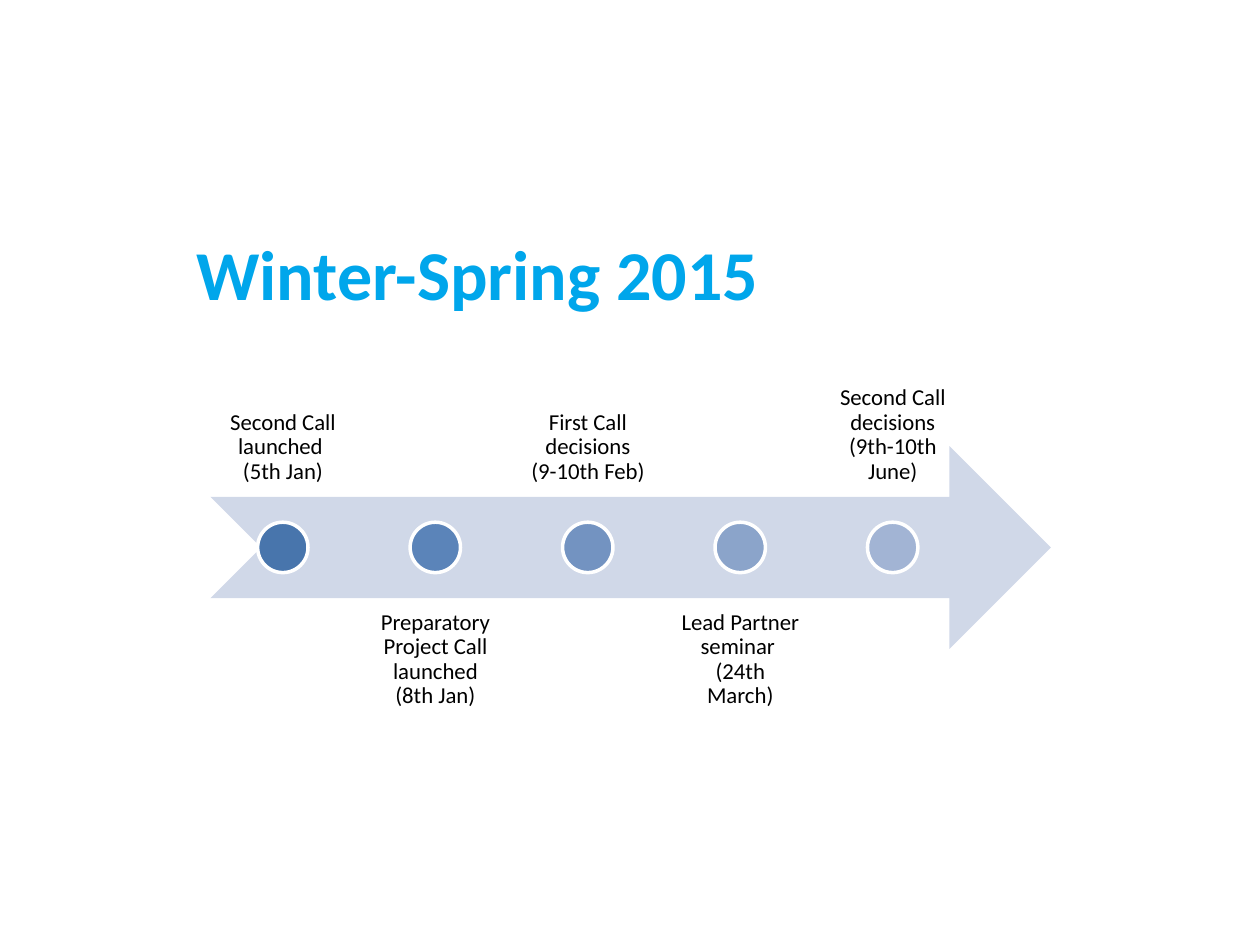
"""Build a timeline slide of the calls planned for winter and spring 2015."""
from pptx import Presentation
from pptx import util as u
from pptx.dml.color import RGBColor
from pptx.enum import shapes, text

MILESTONES = [
    (["Second Call launched ", "(5th Jan)"], "4875AC"),
    (["Preparatory Project Call launched", "(8th Jan)"], "5B84B9"),
    (["First Call decisions", "(9-10th Feb)"], "7393C1"),
    (["Lead Partner seminar ", "(24th March)"], "8BA4CA"),
    (["Second Call decisions", "(9th-10th June)"], "A2B4D4"),
]
ARROW_LEFT, ARROW_TOP, ARROW_WIDTH, ARROW_HEIGHT = 1.67, 3.54, 6.67, 1.61
LABEL_WIDTH, COLUMN_STEP, DOT_SIZE = 1.15, 1.21, 0.4
AXIS = ARROW_TOP + ARROW_HEIGHT / 2
LABEL_OFFSET = 0.4


def add_filled(kind, left, top, width, height, color):
    shape = slide.shapes.add_shape(kind, *map(u.Inches, (left, top, width, height)))
    shape.shadow.inherit = False
    shape.fill.solid()
    shape.fill.fore_color.rgb = RGBColor.from_string(color)
    shape.line.fill.background()
    return shape


def add_label(left, top, width, height, lines, size, color, anchor, bold=False):
    box = slide.shapes.add_textbox(*map(u.Inches, (left, top, width, height)))
    frame = box.text_frame
    frame.word_wrap = True
    frame.vertical_anchor = anchor
    frame.margin_top = frame.margin_bottom = u.Inches(0.1)
    paragraph = frame.paragraphs[0]
    for index, line in enumerate(lines):
        if index:
            paragraph.add_line_break()
        run = paragraph.add_run()
        run.text = line
        run.font.name = "Calibri"
        run.font.size = u.Pt(size)
        run.font.bold = bold
        run.font.color.rgb = RGBColor.from_string(color)
    return paragraph


presentation = Presentation()
presentation.slide_width, presentation.slide_height = u.Inches(10), u.Inches(7.5)
slide = presentation.slides.add_slide(presentation.slide_layouts[6])

add_label(1.46, 1.75, 7.09, 0.82, ["Winter-Spring 2015"], 40, "00A6EB",
          text.MSO_ANCHOR.MIDDLE, bold=True)
add_filled(shapes.MSO_SHAPE.NOTCHED_RIGHT_ARROW,
           ARROW_LEFT, ARROW_TOP, ARROW_WIDTH, ARROW_HEIGHT, "D0D8E8")

for column, (lines, color) in enumerate(MILESTONES):
    left = ARROW_LEFT + column * COLUMN_STEP
    if column % 2:
        top, anchor = AXIS + LABEL_OFFSET, text.MSO_ANCHOR.TOP
    else:
        top, anchor = AXIS - LABEL_OFFSET - ARROW_HEIGHT, text.MSO_ANCHOR.BOTTOM
    paragraph = add_label(left, top, LABEL_WIDTH, ARROW_HEIGHT, lines, 13, "000000", anchor)
    paragraph.alignment = text.PP_ALIGN.CENTER
    paragraph.line_spacing = 0.9

    dot = add_filled(shapes.MSO_SHAPE.OVAL, left + (LABEL_WIDTH - DOT_SIZE) / 2,
                     AXIS - DOT_SIZE / 2, DOT_SIZE, DOT_SIZE, color)
    dot.line.color.rgb = RGBColor.from_string("FFFFFF")
    dot.line.width = u.Pt(2)

presentation.save("out.pptx")
